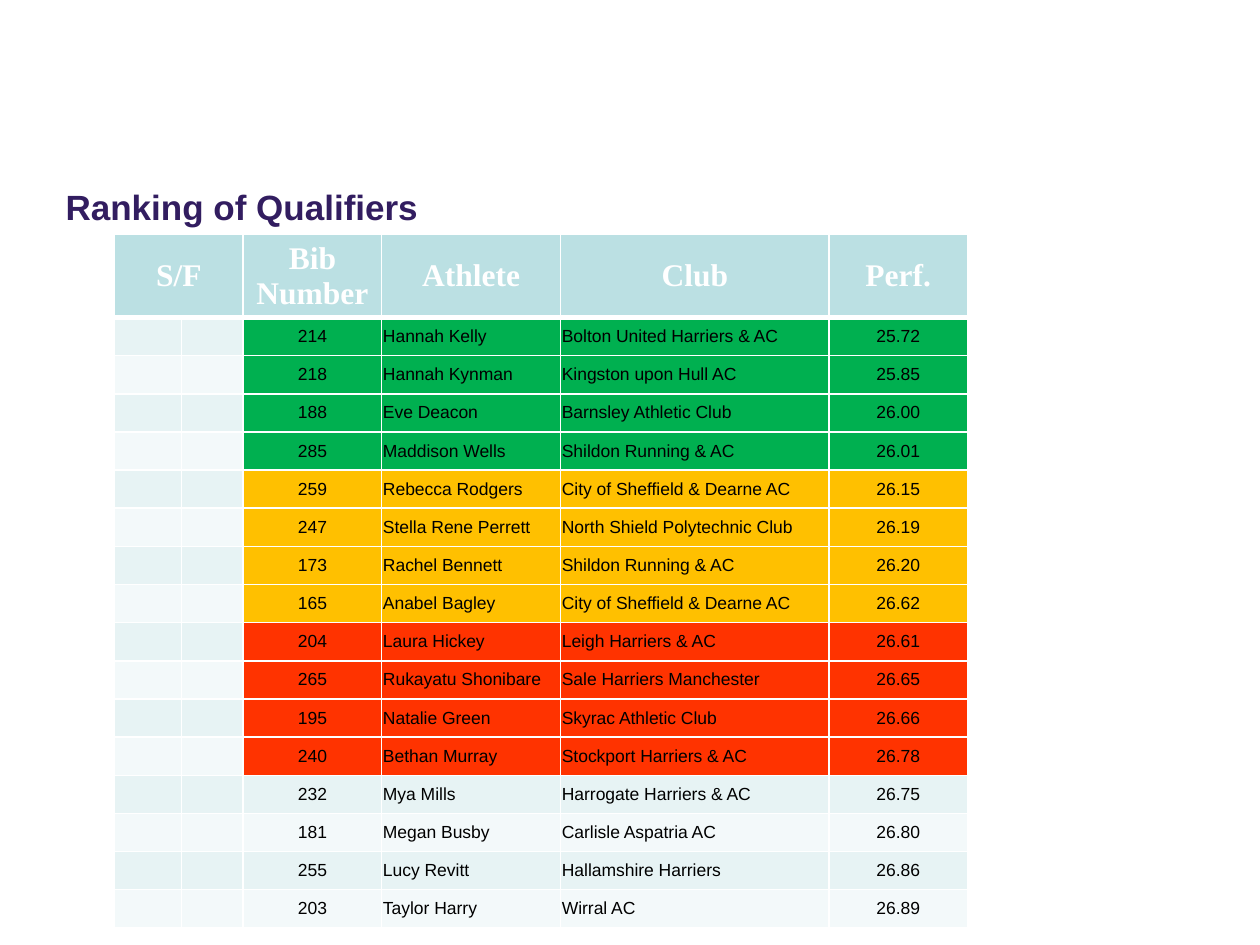
from lxml import etree
from pptx import Presentation
from pptx.dml.color import RGBColor
from pptx.enum.text import MSO_ANCHOR, PP_ALIGN
from pptx.oxml.ns import qn
from pptx.util import Inches, Pt

CENTER, LEFT = PP_ALIGN.CENTER, PP_ALIGN.LEFT
MIDDLE, TOP = MSO_ANCHOR.MIDDLE, MSO_ANCHOR.TOP

PURPLE = RGBColor(0x32, 0x1D, 0x60)
WHITE = RGBColor(0xFF, 0xFF, 0xFF)
BLACK = RGBColor(0x00, 0x00, 0x00)
HEADER_TEAL = RGBColor(0xBB, 0xE0, 0xE3)
BANDS = (RGBColor(0xE7, 0xF3, 0xF4), RGBColor(0xF3, 0xF9, 0xFA))
GREEN = RGBColor(0x00, 0xB0, 0x50)
AMBER = RGBColor(0xFF, 0xC0, 0x00)
RED = RGBColor(0xFF, 0x33, 0x00)

GROUP_COLORS = (GREEN, AMBER, RED)
GROUP_SIZE = 4
COLUMN_WIDTHS = (0.53, 0.49, 1.1, 1.42, 2.13, 1.1)
COLUMN_ALIGNS = (CENTER, CENTER, CENTER, LEFT, LEFT, CENTER)
HEADER_HEIGHT = 0.66
HEADINGS = ("S/F", "", "Bib Number", "Athlete", "Club", "Perf.")
QUALIFIERS = (
    ("214", "Hannah Kelly", "Bolton United Harriers & AC", "25.72"),
    ("218", "Hannah Kynman", "Kingston upon Hull AC", "25.85"),
    ("188", "Eve Deacon", "Barnsley Athletic Club", "26.00"),
    ("285", "Maddison Wells", "Shildon Running & AC", "26.01"),
    ("259", "Rebecca Rodgers", "City of Sheffield & Dearne AC", "26.15"),
    ("247", "Stella Rene Perrett", "North Shield Polytechnic Club", "26.19"),
    ("173", "Rachel Bennett", "Shildon Running & AC", "26.20"),
    ("165", "Anabel Bagley", "City of Sheffield & Dearne AC", "26.62"),
    ("204", "Laura Hickey", "Leigh Harriers & AC", "26.61"),
    ("265", "Rukayatu Shonibare", "Sale Harriers Manchester", "26.65"),
    ("195", "Natalie Green", "Skyrac Athletic Club", "26.66"),
    ("240", "Bethan Murray", "Stockport Harriers & AC", "26.78"),
    ("232", "Mya Mills", "Harrogate Harriers & AC", "26.75"),
    ("181", "Megan Busby", "Carlisle Aspatria AC", "26.80"),
    ("255", "Lucy Revitt", "Hallamshire Harriers", "26.86"),
    ("203", "Taylor Harry", "Wirral AC", "26.89"),
)


def add_run(paragraph, text, font_name, size, color, bold):
    """Add one formatted run to a paragraph."""
    run = paragraph.add_run()
    run.text = text
    run.font.name = font_name
    run.font.size = Pt(size)
    run.font.bold = bold
    run.font.color.rgb = color


def set_borders(cell, top, bottom):
    """Give a cell white borders, with top and bottom widths in points."""
    properties = cell._tc.get_or_add_tcPr()
    for side, width in (("L", 1), ("R", 1), ("T", top), ("B", bottom)):
        line = etree.SubElement(properties, qn(f"a:ln{side}"), w=str(Pt(width)))
        solid = etree.SubElement(line, qn("a:solidFill"))
        etree.SubElement(solid, qn("a:srgbClr"), val=str(WHITE))


def fill_cell(cell, text, align, fill, is_header, top, bottom):
    """Write and format one table cell."""
    set_borders(cell, top, bottom)
    cell.fill.solid()
    cell.fill.fore_color.rgb = fill
    cell.vertical_anchor = MIDDLE
    cell.margin_left = cell.margin_right = Inches(0.01)
    cell.margin_top = cell.margin_bottom = 0
    paragraph = cell.text_frame.paragraphs[0]
    paragraph.alignment = align
    if not text:
        etree.SubElement(paragraph._p, qn("a:endParaRPr"), sz="1000")
    elif is_header:
        add_run(paragraph, text, "Times New Roman", 18, WHITE, True)
    else:
        add_run(paragraph, text, "Arial", 10, BLACK, False)


def place_title(slide, left, top, width, height):
    """Place the slide title in the given box."""
    title = slide.shapes.title
    title.left, title.top = Inches(left), Inches(top)
    title.width, title.height = Inches(width), Inches(height)
    title.text_frame.vertical_anchor = TOP
    paragraph = title.text_frame.paragraphs[0]
    paragraph.alignment = LEFT
    add_run(paragraph, "Ranking of Qualifiers", "Arial", 20, PURPLE, True)


def place_ranking(slide, left, top, width, height):
    """Place the ranking table in the given box."""
    ranking = slide.shapes.add_table(
        len(QUALIFIERS) + 1, len(COLUMN_WIDTHS),
        Inches(left), Inches(top), Inches(width), Inches(height)).table
    ranking.horz_banding = False
    for column, share in zip(ranking.columns, COLUMN_WIDTHS):
        column.width = Inches(width * share / sum(COLUMN_WIDTHS))
    row_height = (height - HEADER_HEIGHT) / len(QUALIFIERS)
    for row in ranking.rows:
        row.height = Inches(row_height)
    ranking.rows[0].height = Inches(HEADER_HEIGHT)

    for column, heading in enumerate(HEADINGS):
        fill_cell(ranking.cell(0, column), heading, CENTER, HEADER_TEAL, True, 1, 3)
    ranking.cell(0, 0).merge(ranking.cell(0, 1))

    for rank, qualifier in enumerate(QUALIFIERS):
        band = BANDS[rank % 2]
        group = rank // GROUP_SIZE
        group_color = GROUP_COLORS[group] if group < len(GROUP_COLORS) else band
        top_width = 3 if rank == 0 else 1
        for column, text in enumerate(("", "") + qualifier):
            fill_cell(ranking.cell(rank + 1, column), text, COLUMN_ALIGNS[column],
                      group_color if text else band, False, top_width, 1)


def main():
    """Build the slide and save it."""
    presentation = Presentation()
    presentation.slide_width, presentation.slide_height = Inches(10), Inches(7.5)
    slide = presentation.slides.add_slide(presentation.slide_layouts[5])
    place_title(slide, 0.42, 1.42, 6.67, 0.58)
    place_ranking(slide, 0.91, 1.86, 6.77, 5.51)
    presentation.save("out.pptx")


if __name__ == "__main__":
    main()
